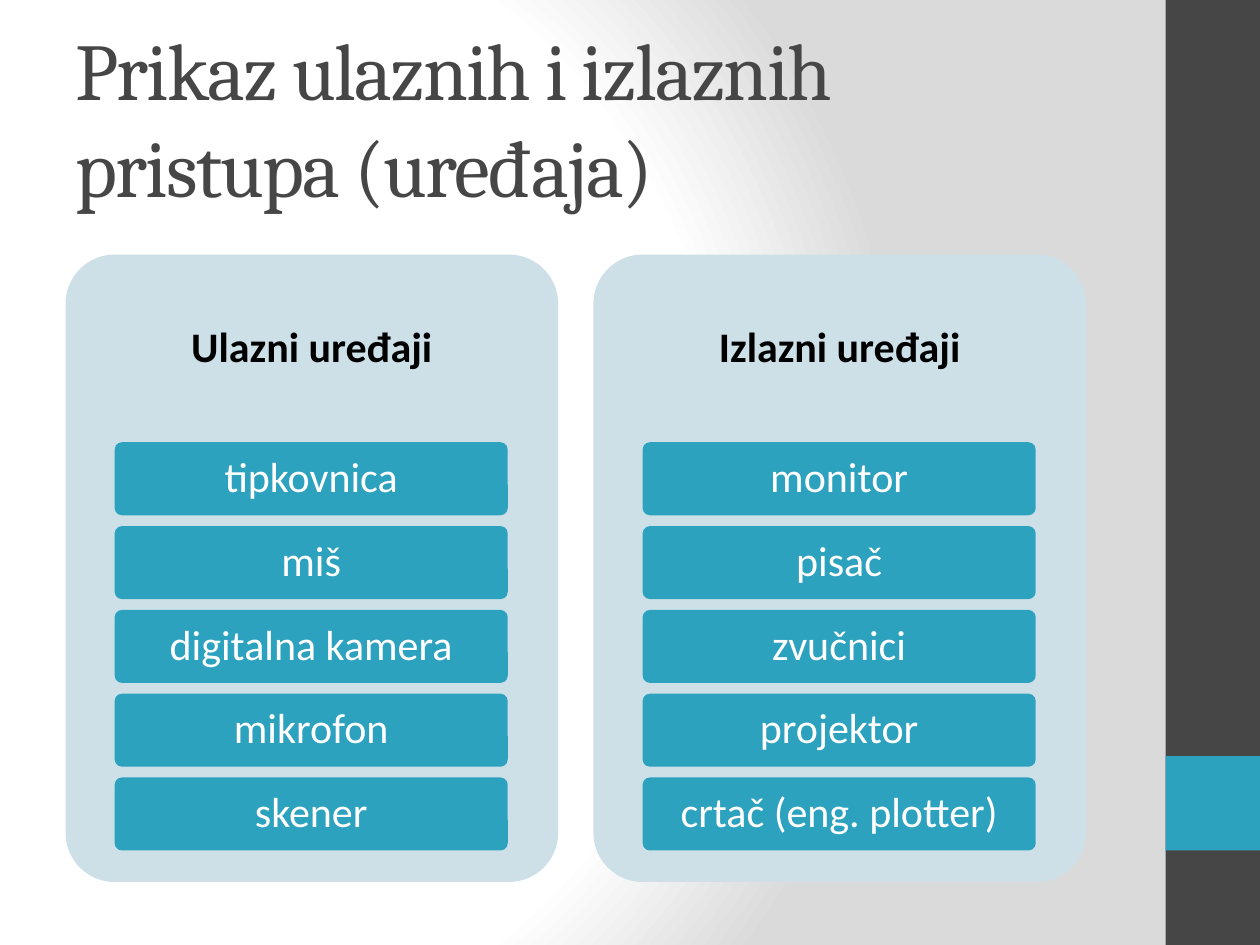
"""Build a slide that lists input and output devices in two panels."""
from lxml import etree
from pptx import Presentation
from pptx.dml import color
from pptx.enum import shapes, text
from pptx.oxml import ns
from pptx.util import Inches, Pt

TITLE = "Prikaz ulaznih i izlaznih pristupa (uređaja)"
PANELS = [
    ("Ulazni uređaji",
     ["tipkovnica", "miš", "digitalna kamera", "mikrofon", "skener"]),
    ("Izlazni uređaji",
     ["monitor", "pisač", "zvučnici", "projektor", "crtač (eng. plotter)"]),
]
DARK, TEAL, PALE, WHITE, BLACK = "464646", "2DA2BF", "CDE0E8", "FFFFFF", "000000"
BACKGROUND_STOPS = [(0, WHITE), (75, WHITE), (100, "DADADA")]

PANEL_LEFT, PANEL_TOP, PANEL_WIDTH, PANEL_HEIGHT = 0.52, 2.02, 3.91, 4.98
PANEL_STEP = 4.19
HEADING_HEIGHT = 1.49
DEVICE_INSET, DEVICE_WIDTH, DEVICE_HEIGHT, DEVICE_STEP = 0.39, 3.12, 0.58, 0.665


def rgb(value):
    return color.RGBColor.from_string(value)


def add_block(slide, kind, box, fill):
    block = slide.shapes.add_shape(kind, *map(Inches, box))
    block.shadow.inherit = False
    block.fill.solid()
    block.fill.fore_color.rgb = rgb(fill)
    block.line.fill.background()
    if kind == shapes.MSO_SHAPE.ROUNDED_RECTANGLE:
        block.adjustments[0] = 0.1
    return block


def write(holder, words, size, font, ink, align, margins, bold=False):
    frame = holder.text_frame
    frame.word_wrap = True
    frame.auto_size = text.MSO_AUTO_SIZE.NONE
    frame.vertical_anchor = text.MSO_ANCHOR.MIDDLE
    frame.margin_left = frame.margin_right = Inches(margins[0])
    frame.margin_top = frame.margin_bottom = Inches(margins[1])
    paragraph = frame.paragraphs[0]
    paragraph.alignment = align
    run = paragraph.add_run()
    run.text = words
    run.font.size = Pt(size)
    run.font.name = font
    run.font.bold = bold
    run.font.color.rgb = rgb(ink)
    return paragraph


def write_label(holder, words, ink, margins, bold=False):
    paragraph = write(holder, words, 24, "Calibri", ink,
                      text.PP_ALIGN.CENTER, margins, bold)
    paragraph.line_spacing = 0.9


def set_background(slide):
    stops = "".join(
        f'<a:gs pos="{position * 1000}"><a:srgbClr val="{tint}"/></a:gs>'
        for position, tint in BACKGROUND_STOPS)
    slide.element.cSld.insert(0, etree.fromstring(
        f'<p:bg {ns.nsdecls("p", "a")}><p:bgPr><a:gradFill rotWithShape="1">'
        f'<a:gsLst>{stops}</a:gsLst><a:path path="circle">'
        '<a:fillToRect l="20000" t="50000" r="100000" b="50000"/></a:path>'
        '</a:gradFill><a:effectLst/></p:bgPr></p:bg>'))


def add_title(slide):
    title = slide.shapes.title
    title.left, title.top, title.width, title.height = map(
        Inches, (0.5, 0.3, 8.33, 1.25))
    paragraph = write(title, TITLE, 46, "Cambria", DARK,
                      text.PP_ALIGN.LEFT, (0.1, 0.05))
    paragraph.runs[0].font._element.set("spc", "-100")


def add_panel(slide, left, heading, devices):
    rounded = shapes.MSO_SHAPE.ROUNDED_RECTANGLE
    add_block(slide, rounded, (left, PANEL_TOP, PANEL_WIDTH, PANEL_HEIGHT), PALE)
    caption = slide.shapes.add_textbox(
        *map(Inches, (left, PANEL_TOP, PANEL_WIDTH, HEADING_HEIGHT)))
    write_label(caption, heading, BLACK, (0.1, 0.1), bold=True)
    for row, device in enumerate(devices):
        top = PANEL_TOP + HEADING_HEIGHT + row * DEVICE_STEP
        button = add_block(slide, rounded, (
            left + DEVICE_INSET, top, DEVICE_WIDTH, DEVICE_HEIGHT), TEAL)
        write_label(button, device, WHITE, (0.05, 0.03))


def main():
    deck = Presentation()
    deck.slide_width, deck.slide_height = Inches(10), Inches(7.5)
    slide = deck.slides.add_slide(deck.slide_layouts[5])
    set_background(slide)
    rectangle = shapes.MSO_SHAPE.RECTANGLE
    add_block(slide, rectangle, (9.25, 0, 0.75, 7.5), DARK)
    add_block(slide, rectangle, (9.25, 6, 0.75, 0.75), TEAL)
    add_title(slide)
    for column, (heading, devices) in enumerate(PANELS):
        add_panel(slide, PANEL_LEFT + column * PANEL_STEP, heading, devices)
    deck.save("out.pptx")


if __name__ == "__main__":
    main()
